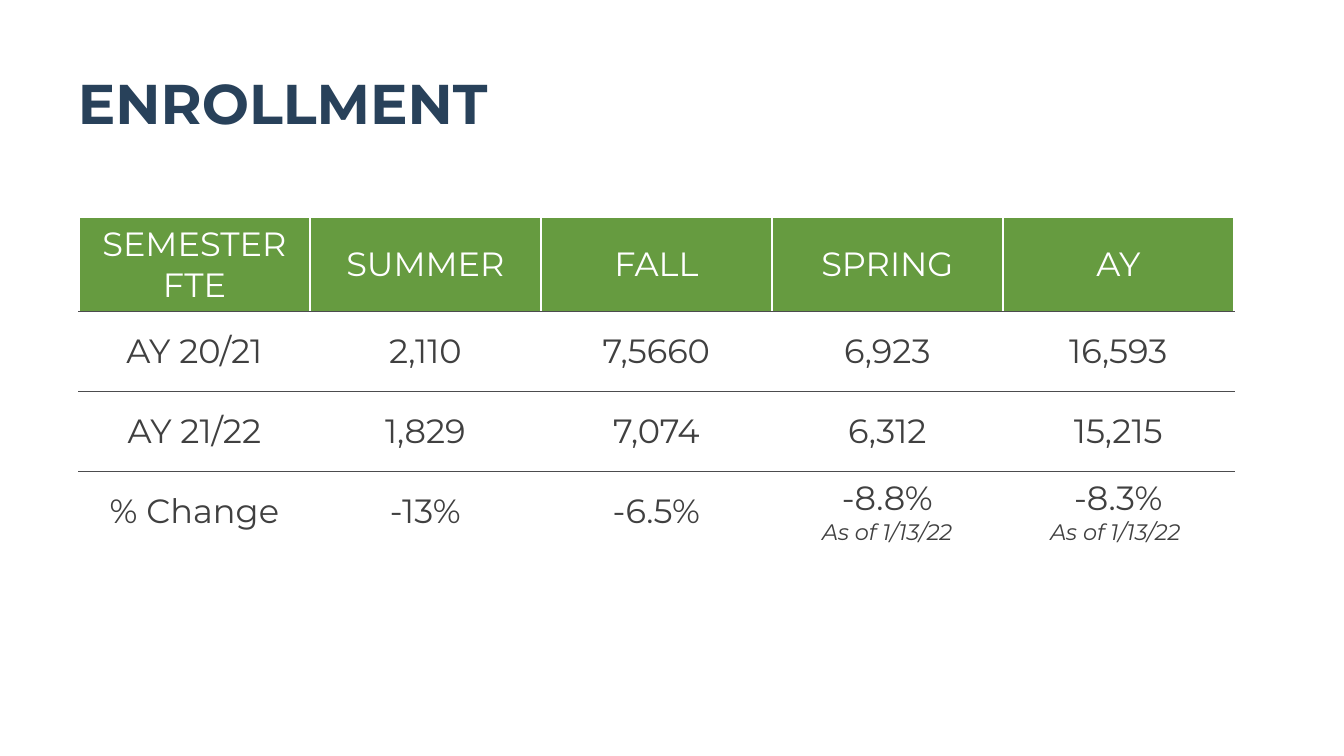
from dataclasses import dataclass

from lxml.etree import SubElement
from pptx import Presentation
from pptx.dml.color import RGBColor
from pptx.enum.text import MSO_ANCHOR, MSO_AUTO_SIZE, PP_ALIGN
from pptx.oxml.ns import qn
from pptx.table import _Cell
from pptx.text.text import TextFrame
from pptx.util import Pt

EMU_PER_PX = 5715  # 160 px to the inch
FONT = "Montserrat"
WHITE, GREEN, NAVY = "FFFFFF", "669B40", "28415A"
TEXT_GRAY, RULE_GRAY = "404040", "4C4C4E"
TABLE_LEFT, TABLE_TOP, COLUMN_WIDTH, ROW_HEIGHT = 94, 259, 275, 95


@dataclass(frozen=True)
class Entry:
    value: str
    note: str = ""


@dataclass(frozen=True)
class Border:
    color: str
    points: float


WHITE_EDGE = Border(WHITE, 1)
GRAY_RULE = Border(RULE_GRAY, 0.75)

ROWS = [
    [Entry(name) for name in ("SEMESTER FTE", "SUMMER", "FALL", "SPRING", "AY")],
    [Entry(value) for value in ("AY 20/21", "2,110", "7,5660", "6,923", "16,593")],
    [Entry(value) for value in ("AY 21/22", "1,829", "7,074", "6,312", "15,215")],
    [
        Entry("% Change"),
        Entry("-13%"),
        Entry("-6.5%"),
        Entry("-8.8%", "As of 1/13/22"),
        Entry("-8.3%", "As of 1/13/22 "),
    ],
]


def px(length: int) -> int:
    return length * EMU_PER_PX


def rgb(color: str) -> RGBColor:
    return RGBColor.from_string(color)


def write_text(frame: TextFrame, text: str, *, size: int, color: str,
               bold: bool = False, italic: bool = False,
               align: PP_ALIGN = PP_ALIGN.LEFT, new_line: bool = False) -> None:
    para = frame.add_paragraph() if new_line else frame.paragraphs[0]
    para.alignment = align
    span = para.add_run()
    span.text = text
    span.font.name = FONT
    span.font.size = Pt(size)
    span.font.bold = bold
    span.font.italic = italic
    span.font.color.rgb = rgb(color)


def set_borders(cell: _Cell, top: Border, bottom: Border) -> None:
    properties = cell._tc.get_or_add_tcPr()
    edges = {"a:lnL": WHITE_EDGE, "a:lnR": WHITE_EDGE, "a:lnT": top, "a:lnB": bottom}
    for position, (tag, border) in enumerate(edges.items()):
        line = SubElement(properties, qn(tag), w=str(Pt(border.points)))
        fill = SubElement(line, qn("a:solidFill"))
        SubElement(fill, qn("a:srgbClr"), val=border.color)
        properties.insert(position, line)  # borders precede the cell fill


def fill_cell(cell: _Cell, entry: Entry, is_header: bool, is_last: bool) -> None:
    cell.vertical_anchor = MSO_ANCHOR.MIDDLE
    if is_header:
        cell.fill.solid()
        cell.fill.fore_color.rgb = rgb(GREEN)
    else:
        cell.fill.background()
    color = WHITE if is_header else TEXT_GRAY
    write_text(cell.text_frame, entry.value, size=18, color=color,
               align=PP_ALIGN.CENTER)
    if entry.note:
        write_text(cell.text_frame, entry.note, size=12, color=color, italic=True,
                   align=PP_ALIGN.CENTER, new_line=True)
    set_borders(cell, top=WHITE_EDGE if is_header else GRAY_RULE,
                bottom=WHITE_EDGE if is_last else GRAY_RULE)


def add_title(page, text: str) -> None:
    box = page.shapes.add_textbox(px(77), px(74), px(723), px(98))
    box.text_frame.word_wrap = True
    box.text_frame.auto_size = MSO_AUTO_SIZE.SHAPE_TO_FIT_TEXT
    write_text(box.text_frame, text, size=30, color=NAVY, bold=True)


def add_enrollment_table(page, rows: list[list[Entry]]) -> None:
    column_count = len(rows[0])
    table = page.shapes.add_table(
        len(rows), column_count, px(TABLE_LEFT), px(TABLE_TOP),
        px(COLUMN_WIDTH * column_count), px(ROW_HEIGHT * len(rows))).table
    table.first_row = False
    table.horz_banding = False
    for row_index, entries in enumerate(rows):
        for column_index, entry in enumerate(entries):
            fill_cell(table.cell(row_index, column_index), entry,
                      is_header=row_index == 0, is_last=row_index == len(rows) - 1)


def main() -> None:
    deck = Presentation()
    deck.slide_width, deck.slide_height = px(1600), px(900)
    page = deck.slides.add_slide(deck.slide_layouts[6])

    # Heading
    add_title(page, "ENROLLMENT")

    # Full-time equivalents by semester
    add_enrollment_table(page, ROWS)

    deck.save("out.pptx")


if __name__ == "__main__":
    main()
